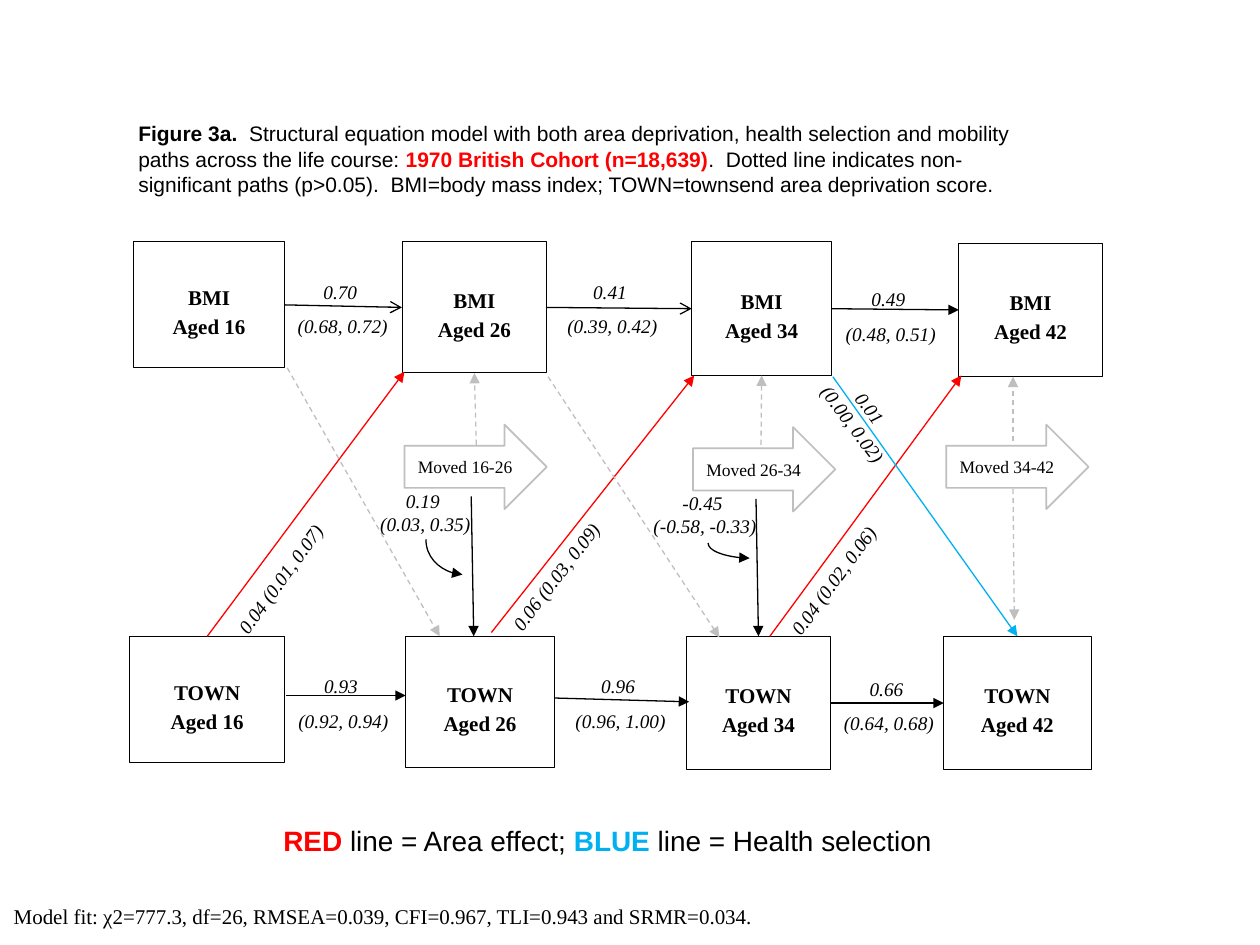
from dataclasses import dataclass
from typing import Optional

from lxml import etree
from pptx import Presentation
from pptx import util as u
from pptx.dml.color import RGBColor
from pptx.enum import dml, shapes, text
from pptx.oxml.ns import qn

COLORS = {"black": "000000", "white": "FFFFFF", "red": "FF0000",
          "blue": "00B0F0", "grey": "BFBFBF"}
SERIF, SANS = "Times New Roman", "Arial"
TOP, LEFT, BOTTOM, RIGHT = range(4)


@dataclass
class Run:
    text: str
    color: str = "black"
    bold: bool = False
    italic: bool = False


@dataclass
class Box:
    name: str
    age: int
    x: float
    y: float
    w: float
    h: float


@dataclass
class Label:
    lines: list[str]
    x: float
    y: float
    w: float = 1.11
    h: float = 0.65
    spacing: float = 1.0
    rotation: float = 0


@dataclass
class Path:
    start: tuple[float, float]
    end: tuple[float, float]
    color: str = "black"
    dashed: bool = False
    head: str = "triangle"
    begin: Optional[tuple[str, int, int]] = None
    finish: Optional[tuple[str, int, int]] = None


@dataclass
class Move:
    ages: str
    x: float
    y: float


BOXES = [
    Box("BMI", 16, 1.06, 1.92, 1.2, 1), Box("BMI", 26, 3.19, 1.92, 1.15, 1.04),
    Box("BMI", 34, 5.49, 1.92, 1.11, 1.06), Box("BMI", 42, 7.61, 1.93, 1.14, 1.06),
    Box("TOWN", 16, 1.03, 5.05, 1.23, 1), Box("TOWN", 26, 3.22, 5.05, 1.18, 1.04),
    Box("TOWN", 34, 5.45, 5.05, 1.14, 1.06), Box("TOWN", 42, 7.49, 5.05, 1.17, 1.06),
]
LABELS = [
    Label(["0.70 ", "(0.68, 0.72)"], 2.18, 1.98, 1.08, spacing=1.5),
    Label(["0.41 ", "(0.39, 0.42)"], 4.32, 1.98, 1.08, spacing=1.5),
    Label(["0.49 ", "(0.48, 0.51)"], 6.53, 2.04, 1.08, spacing=1.5),
    Label(["0.93 ", "(0.92, 0.94)"], 2.17, 5.11, spacing=1.5),
    Label(["0.96 ", "(0.96, 1.00)"], 4.37, 5.11, spacing=1.5),
    Label(["0.66 ", "(0.64, 0.68)"], 6.5, 5.13, spacing=1.5),
    Label(["0.04 (0.01, 0.07)"], 0.9, 4.38, 2.41, 0.26, 1.5, 306.1),
    Label(["0.06 (0.03, 0.09)"], 3.09, 4.36, 2.41, 0.25, 1.5, 307.6),
    Label(["0.04 (0.02, 0.06)"], 5.29, 4.39, 2.41, 0.26, 1.5, 306.3),
    Label(["0.01 ", "(0.00, 0.02)"], 5.72, 3.12, 2.41, 0.26, rotation=53),
    Label(["0.19 ", "(0.03, 0.35)"], 2.82, 3.64),
    Label(["-0.45 ", "(-0.58, -0.33)"], 5.04, 3.66),
]
MODEL_PATHS = [
    Path((2.26, 2.42), (3.19, 2.44), head="arrow",
         begin=("BMI", 16, RIGHT), finish=("BMI", 26, LEFT)),
    Path((4.35, 2.44), (5.49, 2.45), head="arrow",
         begin=("BMI", 26, RIGHT), finish=("BMI", 34, LEFT)),
    Path((6.59, 2.45), (7.61, 2.46),
         begin=("BMI", 34, RIGHT), finish=("BMI", 42, LEFT)),
    Path((2.27, 5.52), (3.22, 5.52)),
    Path((4.4, 5.54), (5.47, 5.57)),
    Path((6.61, 5.58), (7.49, 5.58),
         begin=("TOWN", 34, RIGHT), finish=("TOWN", 42, LEFT)),
    Path((1.64, 5.05), (3.21, 2.95), "red", begin=("TOWN", 16, TOP)),
    Path((3.9, 5.02), (5.51, 2.98), "red"),
    Path((6.11, 5.05), (7.63, 2.98), "red"),
    Path((2.28, 2.92), (3.49, 5.05), "grey", True),
    Path((4.35, 2.99), (5.71, 5.06), "grey", True),
    Path((6.61, 2.99), (8.07, 5.05), "blue", finish=("TOWN", 42, TOP)),
]
MOVES = [Move("16-26", 3.21, 3.37), Move("26-34", 5.5, 3.39), Move("34-42", 7.51, 3.37)]
MOVE_PATHS = [
    Path((3.74, 3.94), (3.76, 5.05)),
    Path((3.78, 3.53), (3.77, 2.95), "grey", True, finish=("BMI", 26, BOTTOM)),
    Path((6, 3.96), (6.01, 5.07), finish=("TOWN", 34, TOP)),
    Path((6.04, 3.53), (6.04, 2.98), "grey", True, finish=("BMI", 34, BOTTOM)),
    Path((8.04, 3.88), (8.05, 4.92), "grey", True),
    Path((8.04, 3.5), (8.04, 2.99), "grey", True),
]
POINTERS = [Path((5.62, 4.31), (5.95, 4.43)), Path((3.38, 4.28), (3.67, 4.56))]


def cm(inches: float) -> u.Length:
    return u.Cm(inches * 2.54)


def rgb(name: str) -> RGBColor:
    return RGBColor.from_string(COLORS[name])


def write(sp, lines: list[list[Run]], size: float, font: str = SERIF,
          centred: bool = True, spacing: float = 1.0, top: float = 0.05,
          bottom: float = 0.05) -> None:
    tf = sp.text_frame
    tf.word_wrap = True
    tf.margin_top, tf.margin_bottom = cm(top), cm(bottom)
    tf.vertical_anchor = text.MSO_ANCHOR.MIDDLE if centred else text.MSO_ANCHOR.TOP
    for i, runs in enumerate(lines):
        p = tf.add_paragraph() if i else tf.paragraphs[0]
        p.alignment = text.PP_ALIGN.CENTER if centred else text.PP_ALIGN.LEFT
        p.line_spacing = spacing
        for run in runs:
            r = p.add_run()
            r.text = run.text
            r.font.name, r.font.size = font, u.Pt(size)
            r.font.bold, r.font.italic = run.bold, run.italic
            r.font.color.rgb = rgb(run.color)


def add_shape(s, kind, x: float, y: float, w: float, h: float, line: str, width: float):
    sp = s.shapes.add_shape(kind, cm(x), cm(y), cm(w), cm(h))
    sp.shadow.inherit = False
    sp.fill.solid()
    sp.fill.fore_color.rgb = rgb("white")
    sp.line.color.rgb = rgb(line)
    sp.line.width = u.Pt(width)
    return sp


def add_box(s, box: Box):
    sp = add_shape(s, shapes.MSO_SHAPE.RECTANGLE, box.x, box.y, box.w, box.h, "black", 0.5)
    lines = [[Run(t, bold=True)] for t in (box.name, f"Aged {box.age}")]
    write(sp, lines, 12, spacing=1.15, top=0.13)
    return sp


def add_text(s, x: float, y: float, w: float, h: float):
    return s.shapes.add_textbox(cm(x), cm(y), cm(w), cm(h))


def add_label(s, label: Label) -> None:
    sp = add_text(s, label.x, label.y, label.w, label.h)
    sp.rotation = label.rotation
    lines = [[Run(t, italic=True)] for t in label.lines]
    write(sp, lines, 11, spacing=label.spacing, top=0.2, bottom=0)


def style_path(c, path: Path) -> None:
    c.line.color.rgb = rgb(path.color)
    c.line.width = u.Pt(0.75)
    if path.dashed:
        c.line.dash_style = dml.MSO_LINE.DASH
    etree.SubElement(c.line._get_or_add_ln(), qn("a:tailEnd"), type=path.head)
    etree.SubElement(c._element.spPr, qn("a:effectLst"))


def add_path(s, path: Path, boxes: dict) -> None:
    c = s.shapes.add_connector(shapes.MSO_CONNECTOR.STRAIGHT,
                               *map(cm, path.start + path.end))
    for joint, connect in ((path.begin, c.begin_connect), (path.finish, c.end_connect)):
        if joint:
            connect(boxes[joint[:2]], joint[2])
    style_path(c, path)


def add_pointer(s, path: Path) -> None:
    (x1, y1), (x2, y2) = path.start, path.end
    cx, cy, w, h = (x1 + x2) / 2, (y1 + y2) / 2, y2 - y1, x2 - x1
    c = s.shapes.add_connector(shapes.MSO_CONNECTOR.CURVE, cm(cx + w / 2), cm(cy - h / 2),
                               cm(cx - w / 2), cm(cy + h / 2))
    c._element.spPr.find(qn("a:xfrm")).set("rot", str(270 * 60000))
    c._element.spPr.find(qn("a:prstGeom")).set("prst", "curvedConnector2")
    style_path(c, path)


def main() -> None:
    prs = Presentation()
    prs.slide_width, prs.slide_height = u.Cm(25.4), u.Cm(19.05)
    s = prs.slides.add_slide(prs.slide_layouts[6])
    write(add_text(s, 1, 0.91, 7.13, 0.71), [[
        Run("Figure 3a.  ", bold=True),
        Run("Structural equation model with both area deprivation, health selection "
            "and mobility paths across the life course: "),
        Run("1970 British Cohort (n=18,639)", "red", True),
        Run(".  Dotted line indicates non-significant paths (p>0.05).  "
            "BMI=body mass index; TOWN=townsend area deprivation score."),
    ]], 12, SANS, centred=False)
    boxes = {(box.name, box.age): add_box(s, box) for box in BOXES}
    for path in MODEL_PATHS:
        add_path(s, path, boxes)
    for move in MOVES:
        sp = add_shape(s, shapes.MSO_SHAPE.RIGHT_ARROW, move.x, move.y, 1.13, 0.67, "grey", 1)
        write(sp, [[Run(f"Moved {move.ages}")]], 10)
    for path in MOVE_PATHS:
        add_path(s, path, boxes)
    for label in LABELS:
        add_label(s, label)
    for path in POINTERS:
        add_pointer(s, path)
    write(add_text(s, 0.01, 7.12, 7.89, 0.3), [[
        Run("Model fit: χ2=777.3, df=26, RMSEA=0.039, CFI=0.967, TLI=0.943 and SRMR=0.034."),
    ]], 12, centred=False)
    write(add_text(s, 2.15, 6.49, 5.41, 0.37), [[
        Run("RED", "red", True), Run(" line = Area effect; "),
        Run("BLUE", "blue", True), Run(" line = Health selection"),
    ]], 16, SANS, centred=False)
    prs.save("out.pptx")


if __name__ == "__main__":
    main()
